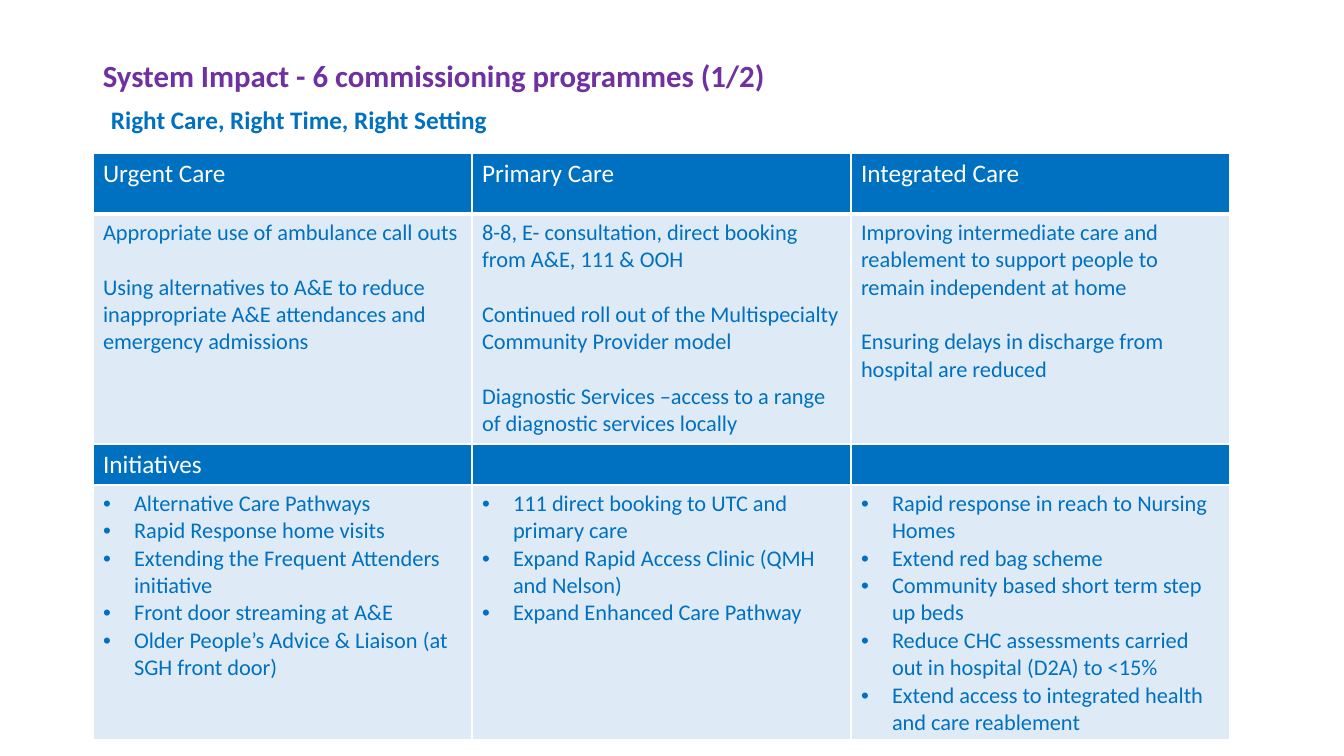
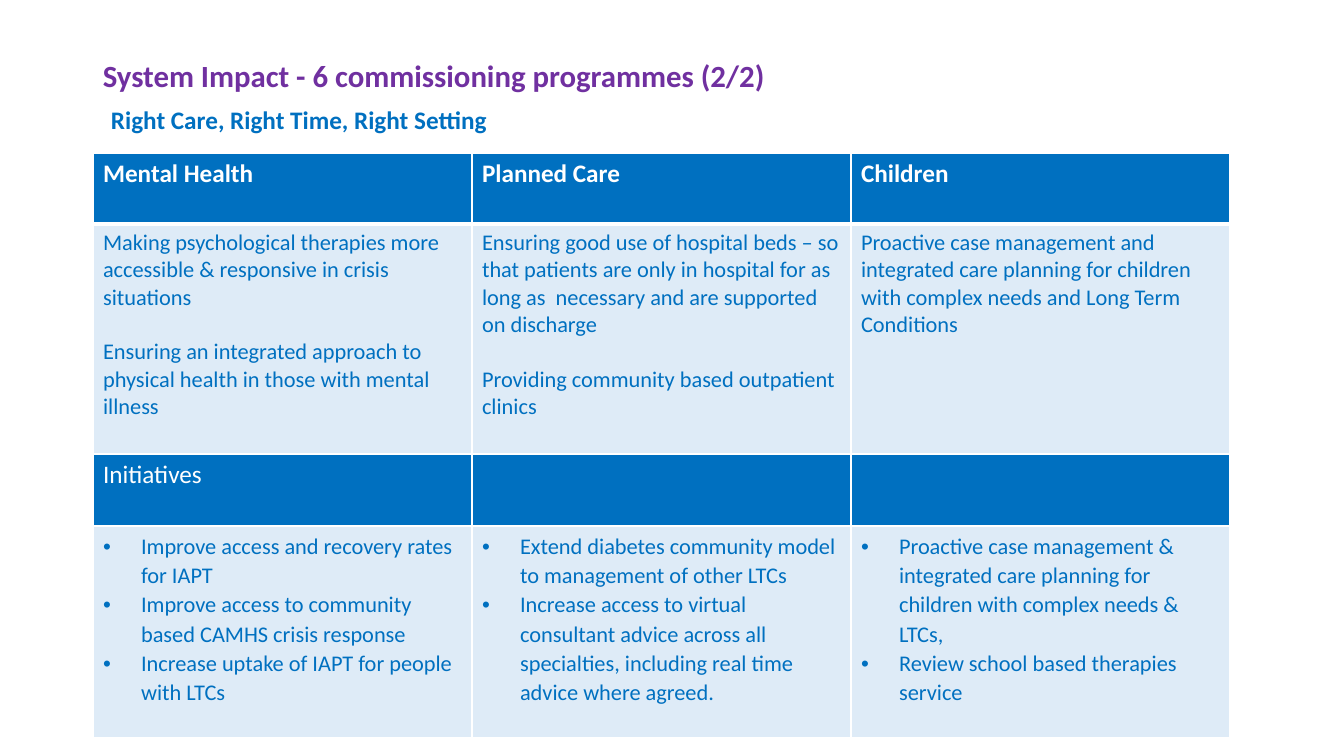
"""Build two slides that set out the six commissioning programmes."""
import dataclasses
import typing

import lxml.etree
import pptx
import pptx.dml.color
import pptx.enum.text
import pptx.oxml.ns
import pptx.util

EMU_PER_PX = 914400 / 100.8
PURPLE = pptx.dml.color.RGBColor(0x70, 0x30, 0xA0)
BLUE = pptx.dml.color.RGBColor(0x00, 0x70, 0xC0)
PALE = pptx.dml.color.RGBColor(0xDE, 0xEB, 0xF7)
WHITE = pptx.dml.color.RGBColor(0xFF, 0xFF, 0xFF)

LEFT, TABLE_TOP, COLUMN_WIDTH = 93, 153, 379
Format = dict[str, typing.Any]


@dataclasses.dataclass(frozen=True)
class TextStyle:
    size: int
    color: pptx.dml.color.RGBColor
    bold: bool = False
    paragraph: Format = dataclasses.field(default_factory=dict)
    hanging: int = 0


@dataclasses.dataclass(frozen=True)
class Label:
    left: int
    top: int
    width: int
    height: int
    style: TextStyle
    wrap: bool = True


@dataclasses.dataclass(frozen=True)
class Programme:
    name: str
    aims: list[str]
    initiatives: list[str]


@dataclasses.dataclass(frozen=True)
class ProgrammePage:
    title: str
    row_heights: list[int]
    header: TextStyle
    bullets: TextStyle
    programmes: list[Programme]


@dataclasses.dataclass(frozen=True)
class Row:
    texts: list[list[str]]
    style: TextStyle
    fill: pptx.dml.color.RGBColor


TITLE = Label(LEFT, 40, 1159, 75, TextStyle(22, PURPLE, True, {"line_spacing": 0.9}))
SUBTITLE = Label(101, 99, 406, 40, TextStyle(18, BLUE, True), wrap=False)
BAND = TextStyle(18, WHITE)
AIM = TextStyle(16, BLUE, paragraph={"space_after": pptx.util.Pt(19.5)})

PAGES = [
    ProgrammePage(
        "System Impact - 6 commissioning programmes (1/2)",
        [61, 230, 41, 255],
        BAND,
        TextStyle(16, BLUE, hanging=31),
        [
            Programme(
                "Urgent Care",
                ["Appropriate use of ambulance call outs",
                 "Using alternatives to A&E to reduce inappropriate A&E attendances and  emergency admissions"],
                ["Alternative Care Pathways",
                 "Rapid Response home visits",
                 "Extending the Frequent Attenders initiative",
                 "Front door streaming at A&E",
                 "Older People’s Advice & Liaison (at SGH front door)"],
            ),
            Programme(
                "Primary Care",
                ["8-8, E- consultation, direct booking from A&E, 111 & OOH",
                 "Continued roll out of the Multispecialty Community Provider model",
                 "Diagnostic Services –access to a range of diagnostic services locally"],
                ["111 direct booking to UTC and primary care",
                 "Expand Rapid Access Clinic (QMH and Nelson)",
                 "Expand Enhanced Care Pathway"],
            ),
            Programme(
                "Integrated Care",
                ["Improving intermediate care and reablement to support people to remain independent at home",
                 "Ensuring delays in discharge from hospital are reduced"],
                ["Rapid response in reach to Nursing Homes",
                 "Extend red bag scheme",
                 "Community based short term step up beds",
                 "Reduce CHC assessments carried out in hospital (D2A) to <15%",
                 "Extend access to integrated health and care reablement"],
            ),
        ],
    ),
    ProgrammePage(
        "System Impact - 6 commissioning programmes (2/2)",
        [71, 230, 72, 212],
        TextStyle(18, WHITE, True),
        TextStyle(16, BLUE, paragraph={"line_spacing": 1.07}, hanging=38),
        [
            Programme(
                "Mental Health",
                ["Making psychological therapies more accessible & responsive in crisis situations",
                 "Ensuring an integrated approach to physical health in those with mental illness"],
                ["Improve access and recovery rates for IAPT",
                 "Improve access to community based CAMHS crisis response",
                 "Increase uptake of IAPT for people with LTCs"],
            ),
            Programme(
                "Planned Care",
                ["Ensuring good use of hospital beds – so that patients are only in hospital for as  long as"
                 "  necessary and are supported on discharge",
                 "Providing community based outpatient clinics"],
                ["Extend diabetes community model to management of other LTCs",
                 "Increase access to virtual consultant advice across all specialties,"
                 " including real time advice where agreed."],
            ),
            Programme(
                "Children",
                ["Proactive case management and integrated care planning for children"
                 " with complex needs and Long Term Conditions"],
                ["Proactive case management & integrated care planning for children with complex needs & LTCs,",
                 "Review school based therapies service"],
            ),
        ],
    ),
]


def px(length: int) -> pptx.util.Emu:
    """Turn px into EMU."""
    return pptx.util.Emu(round(length * EMU_PER_PX))


def apply_format(target: typing.Any, values: Format) -> None:
    """Set each named attribute on the target."""
    for name, value in values.items():
        setattr(target, name, value)


def add_bullet(para: typing.Any, hanging: int) -> None:
    """Give the paragraph a round bullet and a hanging indent."""
    properties = para._p.get_or_add_pPr()
    properties.set("marL", str(px(hanging)))
    properties.set("indent", str(-px(hanging)))
    for tag, key, value in (("a:buFont", "typeface", "Arial"), ("a:buChar", "char", "•")):
        lxml.etree.SubElement(properties, pptx.oxml.ns.qn(tag)).set(key, value)


def write_text(frame: typing.Any, lines: list[str], style: TextStyle) -> None:
    """Write one paragraph for each line."""
    for index, line in enumerate(lines):
        para = frame.add_paragraph() if index else frame.paragraphs[0]
        if index < len(lines) - 1 or "space_after" not in style.paragraph:
            apply_format(para, style.paragraph)
        if style.hanging:
            add_bullet(para, style.hanging)
        span = para.add_run()
        span.text = line
        apply_format(span.font, {"name": "Calibri", "size": pptx.util.Pt(style.size), "bold": style.bold})
        span.font.color.rgb = style.color


def add_label(page: typing.Any, label: Label, text: str) -> None:
    """Add a line of text centred on the height of its box."""
    box = page.shapes.add_textbox(px(label.left), px(label.top), px(label.width), px(label.height))
    apply_format(box.text_frame, {
        "word_wrap": label.wrap,
        "vertical_anchor": pptx.enum.text.MSO_ANCHOR.MIDDLE,
    })
    write_text(box.text_frame, [text], label.style)


def add_borders(cell: typing.Any, top: int, bottom: int) -> None:
    """Draw white cell borders with widths in points."""
    properties = cell._tc.get_or_add_tcPr()
    for side, width in (("L", 1), ("R", 1), ("T", top), ("B", bottom)):
        line = lxml.etree.SubElement(properties, pptx.oxml.ns.qn(f"a:ln{side}"))
        line.set("w", str(pptx.util.Pt(width)))
        fill = lxml.etree.SubElement(line, pptx.oxml.ns.qn("a:solidFill"))
        lxml.etree.SubElement(fill, pptx.oxml.ns.qn("a:srgbClr")).set("val", str(WHITE))


def add_programme_table(page: typing.Any, content: ProgrammePage) -> None:
    """Add the table with one column for each programme."""
    programmes = content.programmes
    rows = [
        Row([[item.name] for item in programmes], content.header, BLUE),
        Row([item.aims for item in programmes], AIM, PALE),
        Row([["Initiatives"]] + [[] for _ in programmes[1:]], BAND, BLUE),
        Row([item.initiatives for item in programmes], content.bullets, PALE),
    ]
    table = page.shapes.add_table(
        len(rows), len(programmes), px(LEFT), px(TABLE_TOP),
        px(COLUMN_WIDTH * len(programmes)), px(sum(content.row_heights)),
    ).table
    apply_format(table, {"first_row": False, "horz_banding": False})
    for column in table.columns:
        column.width = px(COLUMN_WIDTH)
    for row_index, (row, height) in enumerate(zip(rows, content.row_heights)):
        table.rows[row_index].height = px(height)
        for column_index, lines in enumerate(row.texts):
            cell = table.cell(row_index, column_index)
            add_borders(cell, 3 if row_index == 1 else 1, 3 if row_index == 0 else 1)
            cell.fill.solid()
            cell.fill.fore_color.rgb = row.fill
            write_text(cell.text_frame, lines, row.style)


def main() -> None:
    """Build and save the deck."""
    deck = pptx.Presentation()
    apply_format(deck, {"slide_width": px(1344), "slide_height": px(756)})
    for content in PAGES:
        page = deck.slides.add_slide(deck.slide_layouts[6])
        add_label(page, TITLE, content.title)
        add_programme_table(page, content)
        add_label(page, SUBTITLE, "Right Care, Right Time, Right Setting")
    deck.save("out.pptx")


if __name__ == "__main__":
    main()
